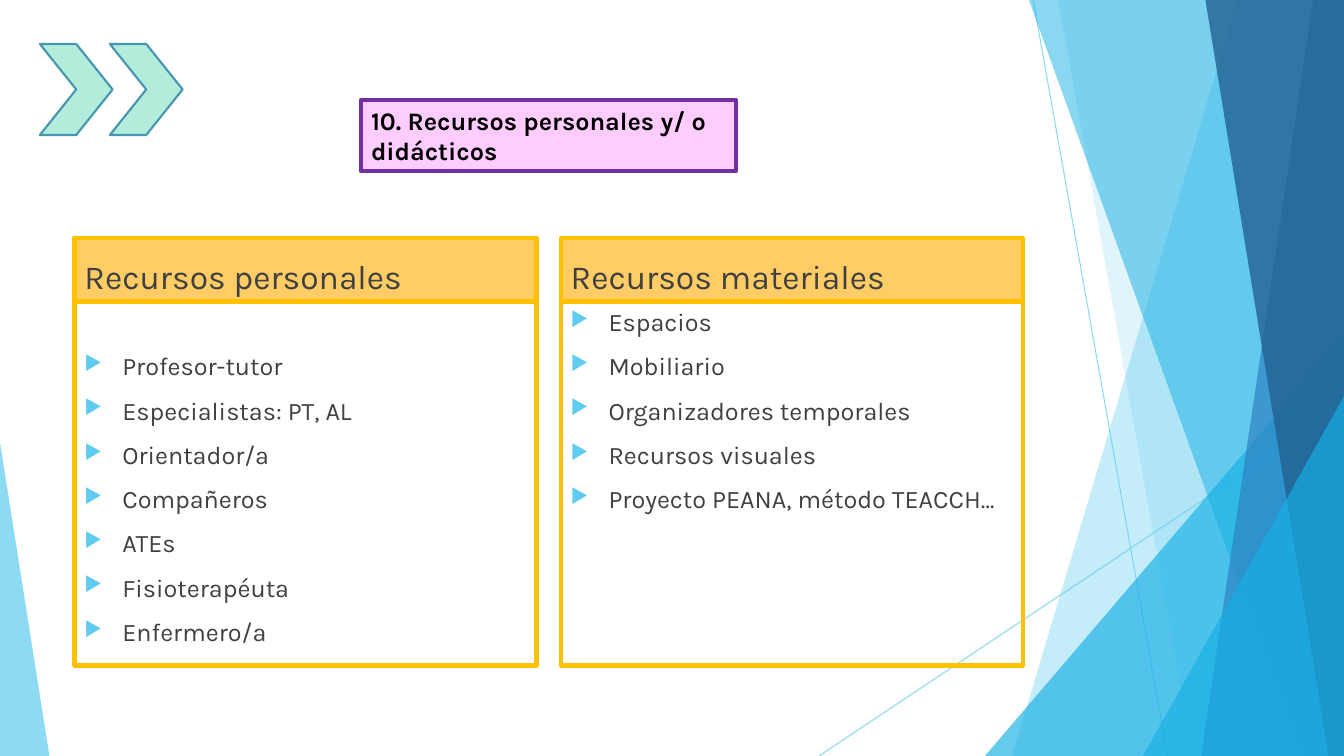
from lxml import etree
from pptx import Presentation
from pptx.dml.color import RGBColor
from pptx.enum.shapes import MSO_CONNECTOR, MSO_SHAPE
from pptx.enum.text import MSO_ANCHOR, MSO_AUTO_SIZE, PP_ALIGN
from pptx.oxml.ns import qn
from pptx.util import Pt

RECTANGLE = MSO_SHAPE.RECTANGLE
TRIANGLE = MSO_SHAPE.ISOSCELES_TRIANGLE
CHEVRON = MSO_SHAPE.CHEVRON
STRAIGHT = MSO_CONNECTOR.STRAIGHT
TOP = MSO_ANCHOR.TOP
BOTTOM = MSO_ANCHOR.BOTTOM
LEFT = PP_ALIGN.LEFT
NO_AUTOFIT = MSO_AUTO_SIZE.NONE

WIDTH, HEIGHT = 960, 540
FONT = "Karla"
SKY, CYAN, AMBER, TEXT = "5FCBEF", "17B0E4", "FFC000", "404040"

TITLE = "10. Recursos personales y/ o didácticos"
COLUMNS = [
    (53.3, 35.1, "Recursos personales",
     ["Profesor-tutor", "Especialistas: PT, AL", "Orientador/a",
      "Compañeros", "ATEs", "Fisioterapéuta", "Enfermero/a"]),
    (400.6, 3.6, "Recursos materiales",
     ["Espacios", "Mobiliario", "Organizadores temporales",
      "Recursos visuales", "Proyecto PEANA, método TEACCH…"]),
]


def color(value):
    return RGBColor.from_string(value)


def apply(target, values):
    for name, value in values.items():
        setattr(target, name, value)


def set_alpha(fill_parent, percent):
    rgb = next(fill_parent.iter(qn("a:srgbClr")))
    etree.SubElement(rgb, qn("a:alpha")).set("val", str(percent * 1000))


def paint(shape, fill=None, line=None, weight=3, alpha=None):
    shape.shadow.inherit = False
    if fill:
        shape.fill.solid()
        shape.fill.fore_color.rgb = color(fill)
        if alpha:
            set_alpha(shape._element.spPr, alpha)
    else:
        shape.fill.background()
    if line:
        shape.line.color.rgb = color(line)
        shape.line.width = Pt(weight)
    else:
        shape.line.fill.background()


def add_preset(page, kind, left, top, width, height, **style):
    shape = page.shapes.add_shape(kind, Pt(left), Pt(top), Pt(width), Pt(height))
    paint(shape, **style)
    return shape


def add_ray(page, start, end):
    ray = page.shapes.add_connector(STRAIGHT, *map(Pt, start + end))
    ray.line.color.rgb = color(SKY)
    ray.line.width = Pt(0.75)
    properties = ray._element.spPr
    set_alpha(properties, 70)
    etree.SubElement(properties, qn("a:effectLst"))


def add_facet(page, top_x, bottom_x, fill, alpha):
    builder = page.shapes.build_freeform(Pt(top_x), 0)
    corners = [(WIDTH, 0), (WIDTH, HEIGHT), (bottom_x, HEIGHT)]
    builder.add_line_segments([(Pt(x), Pt(y)) for x, y in corners])
    paint(builder.convert_to_shape(), fill=fill, alpha=alpha)


def add_corner(page, left, top, width, apex, fill, alpha):
    corner = add_preset(page, TRIANGLE, left, top, width, HEIGHT - top,
                        fill=fill, alpha=alpha)
    corner.adjustments[0] = apex


def add_bullet(para):
    properties = para._p.get_or_add_pPr()
    properties.set("marL", str(Pt(27)))
    properties.set("indent", str(-Pt(27)))
    bullet_color = etree.SubElement(properties, qn("a:buClr"))
    etree.SubElement(bullet_color, qn("a:srgbClr")).set("val", SKY)
    etree.SubElement(properties, qn("a:buSzPct")).set("val", "80000")
    etree.SubElement(properties, qn("a:buChar")).set("char", "▶")


def write(box, lines, size=18, ink=TEXT, bold=False, anchor=TOP,
          inset=3.6, before=10, bullets=False):
    frame = box.text_frame
    apply(frame, {"word_wrap": True, "auto_size": NO_AUTOFIT,
                  "vertical_anchor": anchor,
                  "margin_left": Pt(7.2), "margin_right": Pt(7.2),
                  "margin_top": Pt(inset), "margin_bottom": Pt(3.6)})
    for index, line in enumerate(lines):
        para = frame.add_paragraph() if index else frame.paragraphs[0]
        apply(para, {"alignment": LEFT, "space_before": Pt(before)})
        if bullets:
            add_bullet(para)
        span = para.add_run()
        span.text = line
        apply(span.font, {"name": FONT, "size": Pt(size), "bold": bold})
        span.font.color.rgb = color(ink)


def add_backdrop(page):
    add_ray(page, (738, 0), (834, HEIGHT))
    add_ray(page, (WIDTH, 290), (585, HEIGHT))
    add_facet(page, 884, 723, SKY, 36)
    add_facet(page, 756, 852, SKY, 20)
    add_corner(page, 703.5, 240, 256.5, 1, CYAN, 66)
    add_facet(page, 735, 929.5, CYAN, 50)
    add_facet(page, 938, 858, "2E83C3", 70)
    add_facet(page, 861, 949, "226292", 80)
    add_corner(page, 816.5, 283, 143.5, 1, CYAN, 66)
    add_corner(page, 0, 316, 35.3, 0, SKY, 70)


def add_title(page):
    title = page.shapes.title
    apply(title, {"left": Pt(257.8), "top": Pt(71.3),
                  "width": Pt(268), "height": Pt(51)})
    paint(title, fill="FFCCFF", line="7030A0")
    write(title, [TITLE], ink="000000", bold=True, before=0)


def add_column(page, left, inset, heading, items):
    header = add_preset(page, RECTANGLE, left, 170, 330, 45.4,
                        fill="FFCC66", line=AMBER)
    write(header, [heading], size=24, anchor=BOTTOM)
    body = add_preset(page, RECTANGLE, left, 215.4, 330, 260, line=AMBER)
    write(body, items, inset=inset, bullets=True)


def main():
    deck = Presentation()
    apply(deck, {"slide_width": Pt(WIDTH), "slide_height": Pt(HEIGHT)})
    page = deck.slides.add_slide(deck.slide_layouts[5])
    add_backdrop(page)
    for column in COLUMNS:
        add_column(page, *column)
    add_title(page)
    for left in (28.5, 78.5):
        add_preset(page, CHEVRON, left, 31.4, 52, 65,
                   fill="B3ECDA", line="4696B1", weight=1.5)
    deck.save("out.pptx")


if __name__ == "__main__":
    main()
